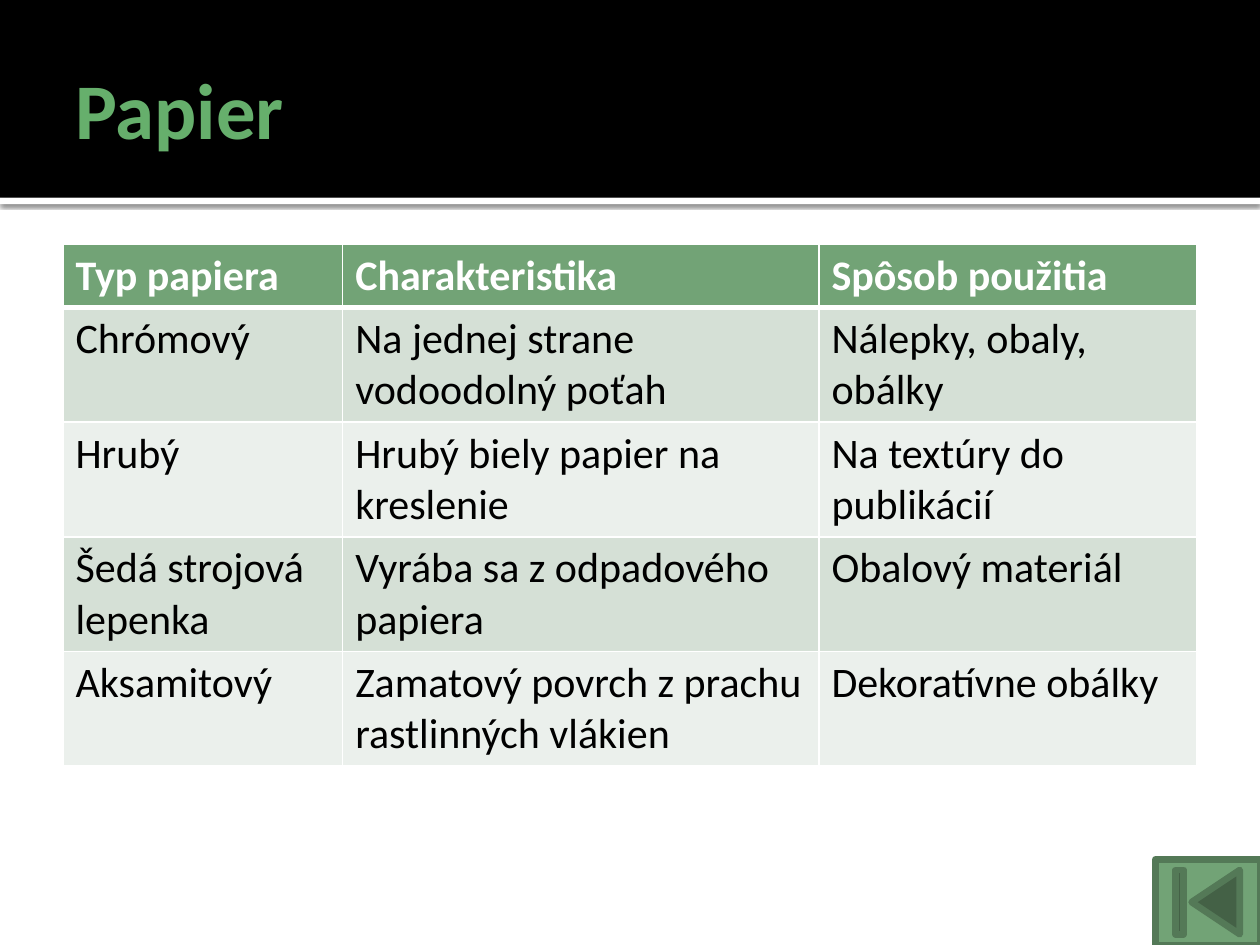
from dataclasses import dataclass

from lxml.etree import SubElement
from pptx import Presentation
from pptx.dml.color import RGBColor
from pptx.enum.shapes import MSO_SHAPE
from pptx.enum.text import MSO_ANCHOR
from pptx.oxml.ns import qn
from pptx.util import Inches, Pt


@dataclass(frozen=True)
class Theme:
    font: str = "Calibri"
    title_size: float = 45
    table_size: float = 24
    title: str = "66AF6C"
    accent: str = "72A376"
    accent_dark: str = "547957"
    bands: tuple = ("D5E0D6", "EBF0EC")
    black: str = "000000"
    white: str = "FFFFFF"


THEME = Theme()
COLUMN_WIDTHS = (2.22, 3.78, 3)
HEADER_HEIGHT = 0.5
ROW_HEIGHT = 0.91
PAPERS = (
    ("Typ papiera", "Charakteristika", "Spôsob použitia"),
    ("Chrómový", "Na jednej strane vodoodolný poťah", "Nálepky, obaly, obálky"),
    ("Hrubý", "Hrubý biely papier na kreslenie", "Na textúry do publikácií"),
    ("Šedá strojová lepenka", "Vyrába sa z odpadového papiera", "Obalový materiál"),
    ("Aksamitový", "Zamatový povrch z prachu rastlinných vlákien", "Dekoratívne obálky"),
)


def rgb(color):
    return RGBColor.from_string(color)


def style_font(font, size, color, bold=False):
    font.name = THEME.font
    font.size = Pt(size)
    font.bold = bold
    font.color.rgb = rgb(color)


def add_shape(slide, kind, left, top, width, height, fill, line=None, line_width=0):
    sp = slide.shapes.add_shape(
        kind, Inches(left), Inches(top), Inches(width), Inches(height)
    )
    sp.shadow.inherit = False
    sp.fill.solid()
    sp.fill.fore_color.rgb = rgb(fill)
    if line:
        sp.line.color.rgb = rgb(line)
        sp.line.width = Pt(line_width)
    else:
        sp.line.fill.background()
    return sp


def add_drop_shadow(sp, color, opacity, blur, distance):
    effects = sp._element.spPr.find(qn("a:effectLst"))
    shadow = SubElement(
        effects, qn("a:outerShdw"), blurRad=str(Pt(blur)), dist=str(Pt(distance)),
        dir="5400000", algn="tl", rotWithShape="0",
    )
    clr = SubElement(shadow, qn("a:srgbClr"), val=color)
    SubElement(clr, qn("a:alpha"), val=str(opacity * 1000))


def add_title(slide, text):
    sp = slide.shapes.add_textbox(Inches(0.5), Inches(0.17), Inches(9), Inches(1.37))
    tf = sp.text_frame
    tf.word_wrap = True
    tf.vertical_anchor = MSO_ANCHOR.MIDDLE
    tf.margin_right = Inches(0.05)
    p = tf.paragraphs[0]
    p.text = text
    style_font(p.font, THEME.title_size, THEME.title, True)


def set_borders(cell, bottom_width, top_width):
    widths = {"a:lnL": 1, "a:lnR": 1, "a:lnT": top_width, "a:lnB": bottom_width}
    tc_pr = cell._tc.get_or_add_tcPr()
    for index, (tag, width) in enumerate(widths.items()):
        ln = SubElement(tc_pr, qn(tag), w=str(Pt(width)))
        fill = SubElement(ln, qn("a:solidFill"))
        SubElement(fill, qn("a:srgbClr"), val=THEME.white)
        tc_pr.insert(index, ln)


def add_paper_table(slide, rows):
    height = HEADER_HEIGHT + ROW_HEIGHT * (len(rows) - 1)
    table = slide.shapes.add_table(
        len(rows), len(COLUMN_WIDTHS),
        Inches(0.5), Inches(1.94), Inches(9), Inches(height),
    ).table
    for column, width in zip(table.columns, COLUMN_WIDTHS):
        column.width = Inches(width)
    for i, row in enumerate(rows):
        header = i == 0
        table.rows[i].height = Inches(HEADER_HEIGHT if header else ROW_HEIGHT)
        for j, text in enumerate(row):
            cell = table.cell(i, j)
            cell.fill.solid()
            fill = THEME.accent if header else THEME.bands[(i - 1) % 2]
            cell.fill.fore_color.rgb = rgb(fill)
            set_borders(cell, 3 if header else 1, 3 if i == 1 else 1)
            p = cell.text_frame.paragraphs[0]
            p.text = text
            color = THEME.white if header else THEME.black
            style_font(p.font, THEME.table_size, color, header)


def main():
    prs = Presentation()
    prs.slide_width, prs.slide_height = Inches(10), Inches(7.5)
    s = prs.slides.add_slide(prs.slide_layouts[6])
    strip = add_shape(s, MSO_SHAPE.RECTANGLE, 0, 1.57, 10, 0.05, THEME.white)
    add_drop_shadow(strip, THEME.black, opacity=60, blur=2.5, distance=0.8)
    add_shape(s, MSO_SHAPE.RECTANGLE, 0, 0, 10, 1.57, THEME.black)
    add_title(s, "Papier")
    add_paper_table(s, PAPERS)
    add_shape(
        s, MSO_SHAPE.ACTION_BUTTON_BEGINNING, 9.17, 6.82, 0.83, 0.68,
        THEME.accent, THEME.accent_dark, 3.78,
    )
    prs.save("out.pptx")


if __name__ == "__main__":
    main()
